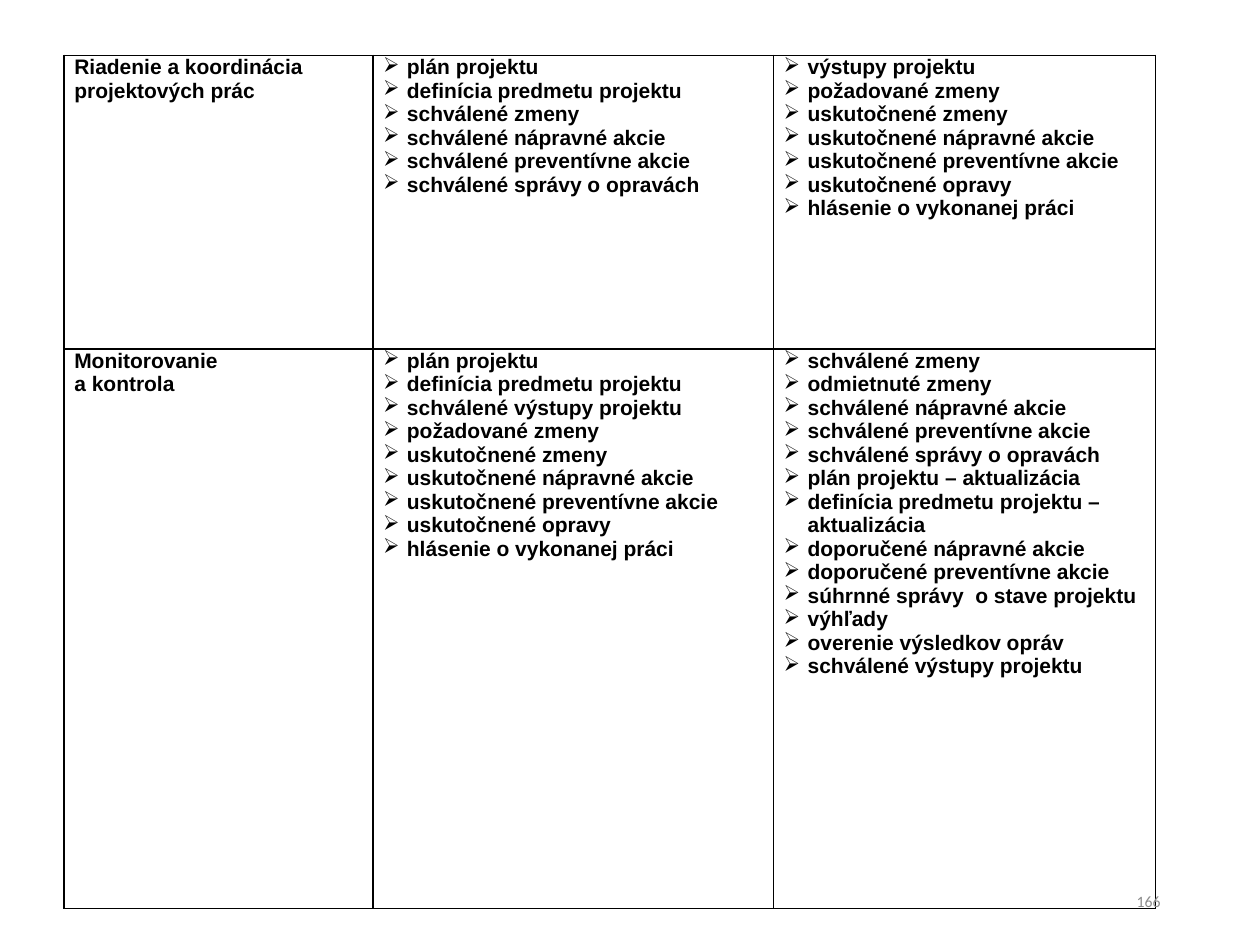
from lxml.etree import SubElement
from pptx import Presentation
from pptx.dml.color import RGBColor
from pptx.enum.text import MSO_ANCHOR, PP_ALIGN
from pptx.oxml.ns import qn
from pptx.util import Inches, Pt

COLORS = {"ink": "000000", "number": "8C8C8C"}
COLS = [2.45, 3.18, 3.03]
ROWS = [2.33, 4.44]
CELLS = [
    [
        ["Riadenie a koordinácia projektových prác"],
        [
            "plán projektu",
            "definícia predmetu projektu",
            "schválené zmeny",
            "schválené nápravné akcie",
            "schválené preventívne akcie",
            "schválené správy o opravách",
        ],
        [
            "výstupy projektu",
            "požadované zmeny",
            "uskutočnené zmeny",
            "uskutočnené nápravné akcie",
            "uskutočnené preventívne akcie",
            "uskutočnené opravy",
            "hlásenie o vykonanej práci",
        ],
    ],
    [
        ["Monitorovanie", "a kontrola"],
        [
            "plán projektu",
            "definícia predmetu projektu",
            "schválené výstupy projektu",
            "požadované zmeny",
            "uskutočnené zmeny",
            "uskutočnené nápravné akcie",
            "uskutočnené preventívne akcie",
            "uskutočnené opravy",
            "hlásenie o vykonanej práci",
        ],
        [
            "schválené zmeny",
            "odmietnuté zmeny",
            "schválené nápravné akcie",
            "schválené preventívne akcie",
            "schválené správy o opravách",
            "plán projektu – aktualizácia",
            "definícia predmetu projektu – aktualizácia",
            "doporučené nápravné akcie",
            "doporučené preventívne akcie",
            "súhrnné správy  o stave projektu",
            "výhľady",
            "overenie výsledkov opráv",
            "schválené výstupy projektu",
        ],
    ],
]


def style(para, font, size, color, bold=False):
    for run in para.runs:
        run.font.name = font
        run.font.size = Pt(size)
        run.font.bold = bold
        run.font.color.rgb = RGBColor.from_string(COLORS[color])


def add_bullet(para):
    props = para._p.get_or_add_pPr()
    props.set("marL", str(Inches(0.19)))
    props.set("indent", str(-Inches(0.19)))
    SubElement(props, qn("a:buChar"), char="➢")


def add_borders(cell):
    props = cell._tc.get_or_add_tcPr()
    for side in ("lnL", "lnR", "lnT", "lnB"):
        line = SubElement(props, qn(f"a:{side}"), w=str(Pt(1)))
        fill = SubElement(line, qn("a:solidFill"))
        SubElement(fill, qn("a:srgbClr"), val=COLORS["ink"])


def fill_cell(cell, lines, listed):
    cell.margin_left = cell.margin_right = Inches(0.08)
    cell.margin_top = cell.margin_bottom = 0
    add_borders(cell)
    cell.fill.background()
    cell.text_frame.text = "\n".join(lines)
    for para in cell.text_frame.paragraphs:
        if listed:
            add_bullet(para)
        style(para, "Arial", 12, "ink", bold=True)


def add_grid(slide):
    frame = slide.shapes.add_table(
        len(ROWS), len(COLS), Inches(0.51), Inches(0.44),
        Inches(sum(COLS)), Inches(sum(ROWS)))
    table = frame.table
    table.first_row = table.horz_banding = False
    for col, width in zip(table.columns, COLS):
        col.width = Inches(width)
    for row, height, texts in zip(table.rows, ROWS, CELLS):
        row.height = Inches(height)
        for i, (cell, lines) in enumerate(zip(row.cells, texts)):
            fill_cell(cell, lines, listed=i > 0)


def add_number(slide, text):
    box = slide.shapes.add_textbox(
        Inches(7.06), Inches(6.95), Inches(2.25), Inches(0.4))
    frame = box.text_frame
    frame.word_wrap = True
    frame.vertical_anchor = MSO_ANCHOR.MIDDLE
    frame.text = text
    para = frame.paragraphs[0]
    para.alignment = PP_ALIGN.RIGHT
    style(para, "Calibri", 9, "number")


def main():
    prs = Presentation()
    prs.slide_width = Inches(10)
    prs.slide_height = Inches(7.5)
    slide = prs.slides.add_slide(prs.slide_layouts[6])
    add_grid(slide)
    add_number(slide, "166")
    prs.save("out.pptx")


if __name__ == "__main__":
    main()
